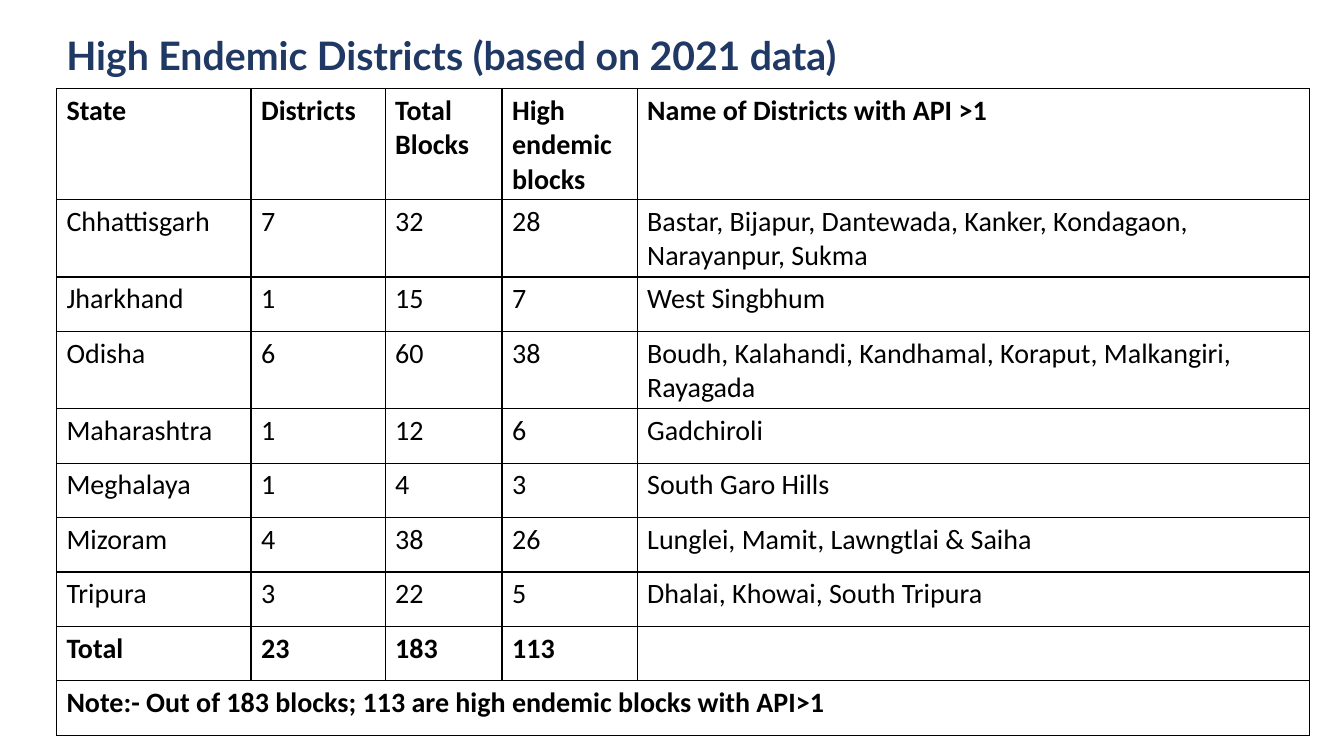
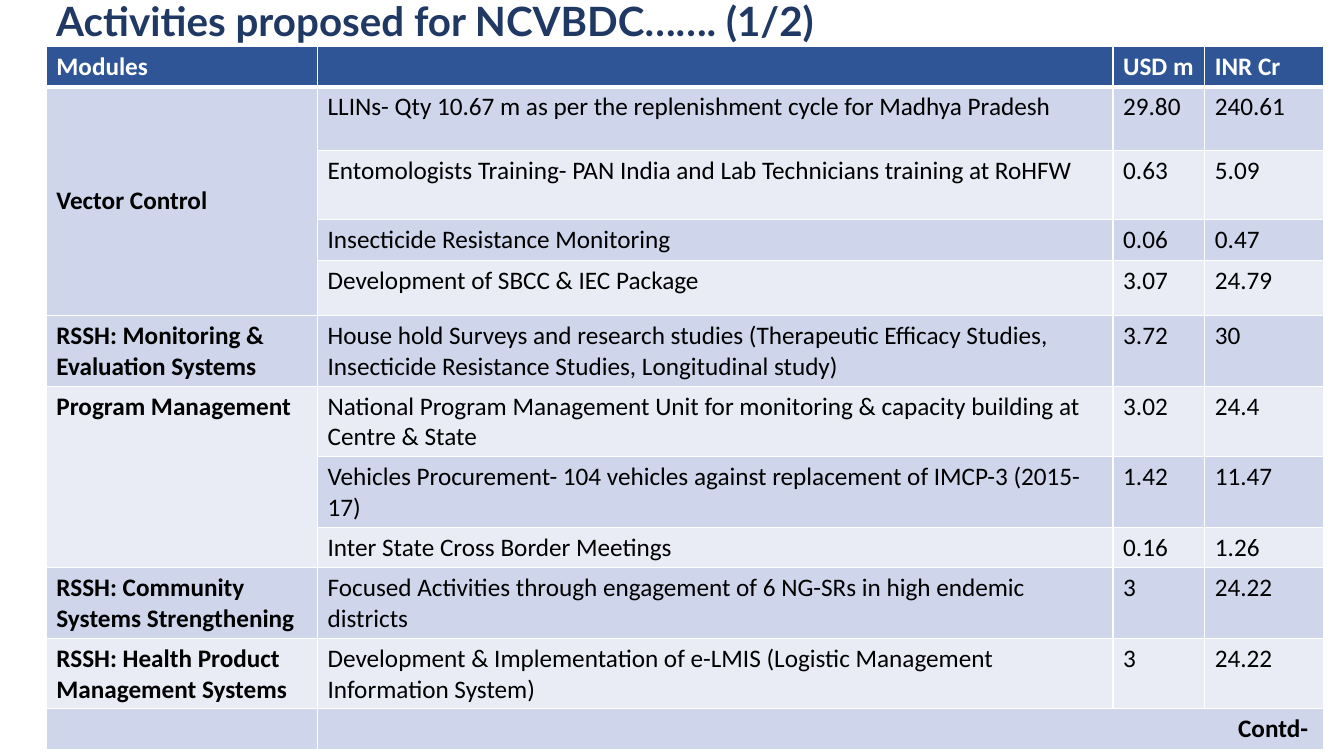
from lxml import etree
from pptx import Presentation
from pptx.dml.color import RGBColor
from pptx.enum import text
from pptx.oxml.ns import qn
from pptx.util import Inches, Pt

COLORS = {
    "title": "203864", "ink": "000000", "paper": "FFFFFF",
    "header": "2F5597", "band_dark": "CFD5EA", "band_light": "E9EBF5",
}

# Content: merges are (first row, first column, last row, last column)
DISTRICTS = {
    "title": "High Endemic Districts (based on 2021 data)",
    "title_size": 28, "title_box": (0.56, 0.35, 12.04, 0.45),
    "origin": (0.56, 0.88), "size": 20, "border": "ink",
    "fills": ("paper", "paper", "paper"), "header_ink": "ink",
    "header_rule": 1, "bold_rows": (0, 8, 9), "bold_cols": (),
    "cols": [1.93, 1.33, 1.16, 1.34, 6.67],
    "heights": [1, 0.73, 0.54, 0.73] + [0.54] * 6,
    "merges": [(9, 0, 9, 4)], "middle": [], "right": [],
    "rows": [
        ("State", "Districts", "Total Blocks", "High endemic blocks",
         "Name of Districts with API >1"),
        ("Chhattisgarh", "7", "32", "28",
         "Bastar, Bijapur, Dantewada, Kanker, Kondagaon, Narayanpur, Sukma"),
        ("Jharkhand", "1", "15", "7", "West Singbhum"),
        ("Odisha", "6", "60", "38",
         "Boudh, Kalahandi, Kandhamal, Koraput, Malkangiri, Rayagada"),
        ("Maharashtra", "1", "12", "6", "Gadchiroli"),
        ("Meghalaya", "1", "4", "3", "South Garo Hills"),
        ("Mizoram", "4", "38", "26", "Lunglei, Mamit, Lawngtlai & Saiha"),
        ("Tripura", "3", "22", "5", "Dhalai, Khowai, South Tripura"),
        ("Total", "23", "183", "113", ""),
        ("Note:- Out of 183 blocks; 113 are high endemic blocks with API>1",
         "", "", "", ""),
    ],
}

ACTIVITIES = {
    "title": "Activities proposed for NCVBDC……. (1/2)",
    "title_size": 28.8, "title_box": (0.46, 0, 11.86, 0.46),
    "origin": (0.46, 0.46), "size": 18, "border": "paper",
    "fills": ("header", "band_dark", "band_light"), "header_ink": "paper",
    "header_rule": 3, "bold_rows": (0, 11), "bold_cols": (0,),
    "cols": [2.69, 7.89, 0.91, 1.18],
    "heights": [0.39, 0.63, 0.69, 0.39, 0.55, 0.69, 0.69, 0.69, 0.39,
                0.69, 0.69, 0.39],
    "merges": [(1, 0, 4, 0), (6, 0, 8, 0), (11, 1, 11, 3)],
    "middle": [(1, 0)], "right": [(11, 1)],
    "rows": [
        ("Modules", "", "USD m", "INR Cr"),
        ("Vector Control",
         "LLINs- Qty 10.67 m as per the replenishment cycle for Madhya Pradesh",
         "29.80", "240.61"),
        ("", "Entomologists Training- PAN India and Lab Technicians training at RoHFW",
         "0.63", "5.09"),
        ("", "Insecticide Resistance Monitoring", "0.06", "0.47"),
        ("", "Development of SBCC & IEC Package", "3.07", "24.79"),
        ("RSSH: Monitoring & Evaluation Systems",
         "House hold Surveys and research studies (Therapeutic Efficacy Studies, "
         "Insecticide Resistance Studies, Longitudinal study)", "3.72", "30"),
        ("Program Management",
         "National Program Management Unit for monitoring & capacity building "
         "at Centre & State", "3.02", "24.4"),
        ("", "Vehicles Procurement- 104 vehicles against replacement of IMCP-3 "
         "(2015-17)", "1.42", "11.47"),
        ("", "Inter State Cross Border Meetings", "0.16", "1.26"),
        ("RSSH: Community Systems Strengthening",
         "Focused Activities through engagement of 6 NG-SRs in high endemic "
         "districts", "3", "24.22"),
        ("RSSH: Health Product Management Systems",
         "Development & Implementation of e-LMIS (Logistic Management "
         "Information System)", "3", "24.22"),
        ("", "Contd- ", "", ""),
    ],
}


def rgb(name):
    return RGBColor.from_string(COLORS[name])


def write(p, words, color, **font):
    r = p.add_run()
    r.text = words
    r.font.color.rgb = rgb(color)
    for key, value in font.items():
        setattr(r.font, key, value)


def add_title(slide, data):
    tf = slide.shapes.add_textbox(*map(Inches, data["title_box"])).text_frame
    tf.word_wrap = True
    tf.vertical_anchor = text.MSO_ANCHOR.MIDDLE
    p = tf.paragraphs[0]
    p.line_spacing = 0.9
    write(p, data["title"], "title", name="Lato", size=Pt(data["title_size"]),
          bold=True)


def set_borders(cell, color, widths):
    """Draw the left, right, top and bottom edges, ahead of the cell's fill."""
    props = cell._tc.get_or_add_tcPr()
    for i, (side, width) in enumerate(zip("LRTB", widths)):
        ln = etree.Element(qn(f"a:ln{side}"), w=str(Pt(width)))
        fill = etree.SubElement(ln, qn("a:solidFill"))
        etree.SubElement(fill, qn("a:srgbClr"), val=COLORS[color])
        props.insert(i, ln)


def add_table(slide, data):
    cols, heights = data["cols"], data["heights"]
    frame = slide.shapes.add_table(
        len(heights), len(cols), *map(Inches, data["origin"]),
        Inches(sum(cols)), Inches(sum(heights)))
    table = frame.table
    table.first_row = table.horz_banding = False
    for col, width in zip(table.columns, cols):
        col.width = Inches(width)
    for row, height in zip(table.rows, heights):
        row.height = Inches(height)
    for top, left, bottom, right in data["merges"]:
        table.cell(top, left).merge(table.cell(bottom, right))

    header, odd, even = data["fills"]
    for i, row in enumerate(data["rows"]):
        for j, words in enumerate(row):
            cell = table.cell(i, j)
            cell.fill.solid()
            cell.fill.fore_color.rgb = rgb(
                header if i == 0 else odd if i % 2 else even)
            rule = data["header_rule"]
            set_borders(cell, data["border"],
                        (1, 1, rule if i == 1 else 1, rule if i == 0 else 1))
            if (i, j) in data["middle"]:
                cell.vertical_anchor = text.MSO_ANCHOR.MIDDLE
            p = cell.text_frame.paragraphs[0]
            if (i, j) in data["right"]:
                p.alignment = text.PP_ALIGN.RIGHT
            if words:
                write(p, words, data["header_ink"] if i == 0 else "ink",
                      name="Calibri", size=Pt(data["size"]),
                      bold=i in data["bold_rows"] or j in data["bold_cols"])


def main():
    prs = Presentation()
    prs.slide_width, prs.slide_height = Inches(13.33), Inches(7.5)
    for data in (DISTRICTS, ACTIVITIES):
        slide = prs.slides.add_slide(prs.slide_layouts[6])
        add_title(slide, data)
        add_table(slide, data)
    prs.save("out.pptx")


if __name__ == "__main__":
    main()
